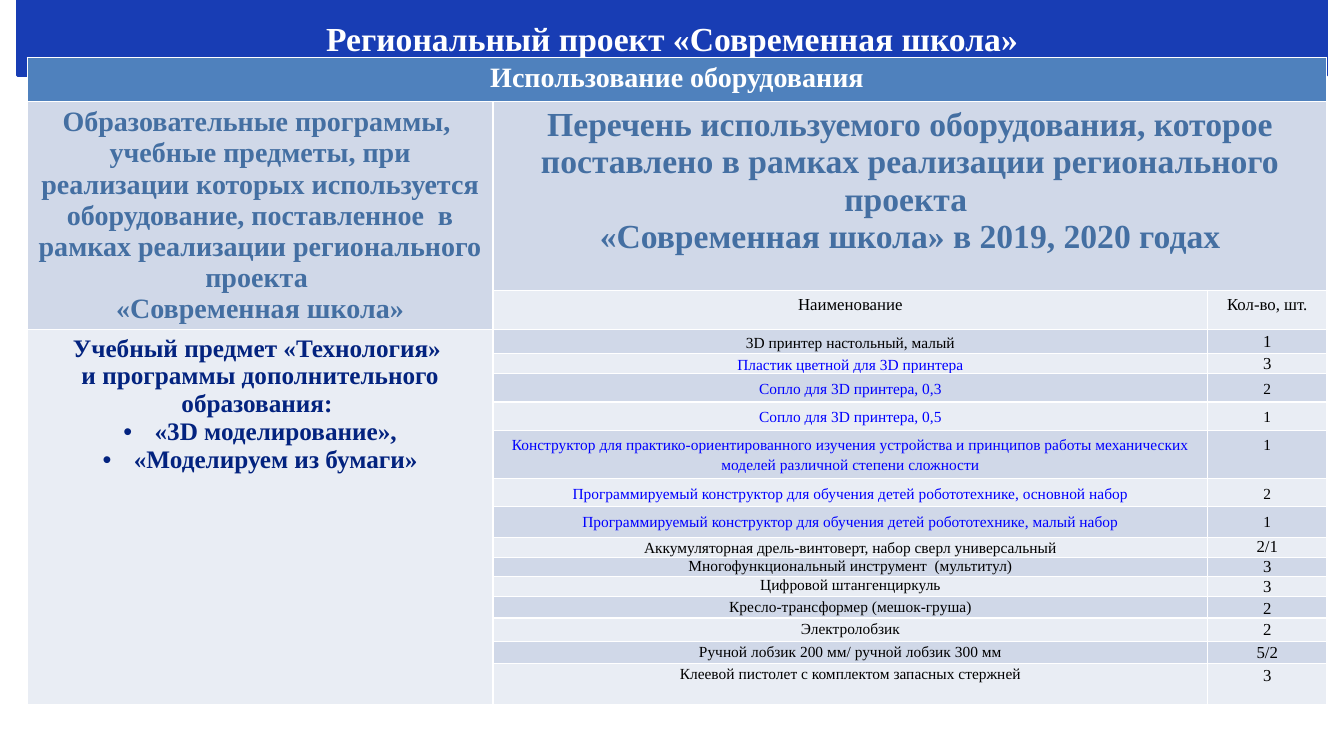
from pptx import Presentation
from pptx.dml.color import RGBColor
from pptx.enum.text import MSO_ANCHOR, MSO_AUTO_SIZE, PP_ALIGN
from pptx.oxml.ns import qn
from pptx.util import Inches, Pt
from lxml import etree

TOP, MIDDLE = MSO_ANCHOR.TOP, MSO_ANCHOR.MIDDLE
CENTER = PP_ALIGN.CENTER
NO_FIT = MSO_AUTO_SIZE.NONE

T = {
    "font": "Times New Roman",
    "white": "FFFFFF", "black": "000000", "banner": "183DB4", "header": "4F81BD",
    "heading": "446FA2", "subject": "03237F", "item": "0000FF",
    "bands": ("D0D8E8", "E9EDF4"),
    "title": 24, "large": 20, "medium": 18, "count": 12, "small": 11,
}


def write(tf, lines, size, color, bold=False, spacing=None):
    tf.word_wrap = True
    for i, line in enumerate(lines):
        p = tf.paragraphs[0] if i == 0 else tf.add_paragraph()
        p.alignment = CENTER
        if spacing:
            p.line_spacing = spacing
        r = p.add_run()
        r.text = line
        r.font.color.rgb = RGBColor.from_string(T[color])
        for key, value in {"name": T["font"], "size": Pt(T[size]), "bold": bold}.items():
            setattr(r.font, key, value)


def inset(cell, side, vertical, anchor):
    margins = {"margin_left": side, "margin_right": side,
               "margin_top": vertical, "margin_bottom": vertical}
    for key, value in margins.items():
        setattr(cell, key, Inches(value))
    cell.vertical_anchor = anchor


prs = Presentation()
prs.slide_width, prs.slide_height = Inches(13.33), Inches(7.5)
s = prs.slides.add_slide(prs.slide_layouts[5])

title = s.shapes.title
box = {"left": 0.17, "top": 0, "width": 12.99, "height": 0.75}
for key, value in box.items():
    setattr(title, key, Inches(value))
spPr = title.element.spPr
geom = etree.SubElement(spPr, qn("a:prstGeom"), prst="horizontalScroll")
etree.SubElement(geom, qn("a:avLst"))
title.fill.solid()
title.fill.fore_color.rgb = RGBColor.from_string(T["banner"])
title.line.color.rgb = RGBColor.from_string(T["banner"])
title.line.width = Pt(2)
tf = title.text_frame
tf.auto_size = NO_FIT
tf.vertical_anchor = MIDDLE
write(tf, ["Региональный проект «Современная школа»"], "title", "white", True)

LOOSE, FIXED = 1.15, Pt(14.2)
items = [
    ("3D принтер настольный, малый", "1", "black", "middle", 0.24),
    ("Пластик цветной для 3D принтера", "3", "item", "middle", 0.2),
    ("Сопло для 3D принтера, 0,3", "2", "item", "fixed", 0.28),
    ("Сопло для 3D принтера, 0,5", "1", "item", "fixed", 0.28),
    ("Конструктор для практико-ориентированного изучения устройства и принципов "
     "работы механических моделей различной степени сложности", "1", "item", "fixed", 0.48),
    ("Программируемый конструктор для обучения детей робототехнике, основной набор",
     "2", "item", "fixed", 0.28),
    ("Программируемый конструктор для обучения детей робототехнике, малый набор",
     "1", "item", "fixed", 0.3),
    ("Аккумуляторная дрель-винтоверт, набор сверл универсальный", "2/1", "black", "mixed", 0.2),
    ("Многофункциональный инструмент  (мультитул)", "3", "black", "tight", 0.19),
    ("Цифровой штангенциркуль", "3", "black", "tight", 0.2),
    ("Кресло-трансформер (мешок-груша)", "2", "black", "loose", 0.21),
    ("Электролобзик", "2", "black", "loose", 0.23),
    ("Ручной лобзик 200 мм/ ручной лобзик 300 мм", "5/2", "black", "loose", 0.22),
    ("Клеевой пистолет с комплектом запасных стержней", "3", "black", "loose", 0.41),
]
styles = {
    "middle": (0.07, 0, "count", (MIDDLE, LOOSE), (MIDDLE, None)),
    "fixed": (0.04, 0.04, "small", (TOP, FIXED), (TOP, FIXED)),
    "mixed": (0.07, 0, "count", (TOP, LOOSE), (MIDDLE, None)),
    "tight": (0.07, 0, "count", (TOP, None), (MIDDLE, None)),
    "loose": (0.07, 0, "count", (TOP, LOOSE), (TOP, LOOSE)),
}
heights = [0.44, 1.87, 0.39] + [item[-1] for item in items]
widths = [4.62, 7.09, 1.18]
last = len(heights) - 1

frame = s.shapes.add_table(len(heights), len(widths), Inches(0.27), Inches(0.57),
                           Inches(sum(widths)), Inches(sum(heights)))
table = frame.table
for column, width in zip(table.columns, widths):
    column.width = Inches(width)
for row, height in zip(table.rows, heights):
    row.height = Inches(height)

for i, row in enumerate(table.rows):
    for j, cell in enumerate(row.cells):
        band = 0 if i == 1 or (i > 2 and i % 2) else 1
        if j == 0:
            band = 0 if i < 3 else 1
        cell.fill.solid()
        cell.fill.fore_color.rgb = RGBColor.from_string(T["header"] if i == 0 else T["bands"][band])

for start, end in [((0, 0), (0, 2)), ((1, 0), (2, 0)), ((1, 1), (1, 2)), ((3, 0), (last, 0))]:
    table.cell(*start).merge(table.cell(*end))

headings = [
    (0, 0, ["Использование оборудования"], "large", "white", True),
    (1, 0, ["Образовательные программы, ",
            "учебные предметы, при реализации которых используется оборудование, "
            "поставленное  в рамках реализации регионального проекта ",
            "«Современная школа»"], "large", "heading", True),
    (1, 1, ["Перечень используемого оборудования, которое поставлено в рамках "
            "реализации регионального проекта ",
            "«Современная школа» в 2019, 2020 годах"], "title", "heading", True),
    (2, 1, ["Наименование"], "count", "black", False),
    (2, 2, ["Кол-во, шт."], "count", "black", False),
    (3, 0, ["Учебный предмет «Технология» ",
            "и программы дополнительного образования: ",
            "«3D моделирование»,", "«Моделируем из бумаги»"], "medium", "subject", True),
]
for i, j, lines, size, color, bold in headings:
    write(table.cell(i, j).text_frame, lines, size, color, bold)

for p in table.cell(3, 0).text_frame.paragraphs[2:]:
    pPr = p._p.get_or_add_pPr()
    pPr.set("marL", str(Inches(0.31)))
    pPr.set("indent", str(-Inches(0.31)))
    etree.SubElement(pPr, qn("a:buFont"), typeface="Arial")
    etree.SubElement(pPr, qn("a:buChar"), char="•")

for i, (name, count, color, style, height) in enumerate(items, 3):
    side, vertical, count_size, name_format, count_format = styles[style]
    columns = [(1, name, "small", color, name_format),
               (2, count, count_size, "black", count_format)]
    for j, text, size, text_color, (anchor, spacing) in columns:
        cell = table.cell(i, j)
        inset(cell, side, vertical, anchor)
        write(cell.text_frame, [text], size, text_color, spacing=spacing)

prs.save("out.pptx")
